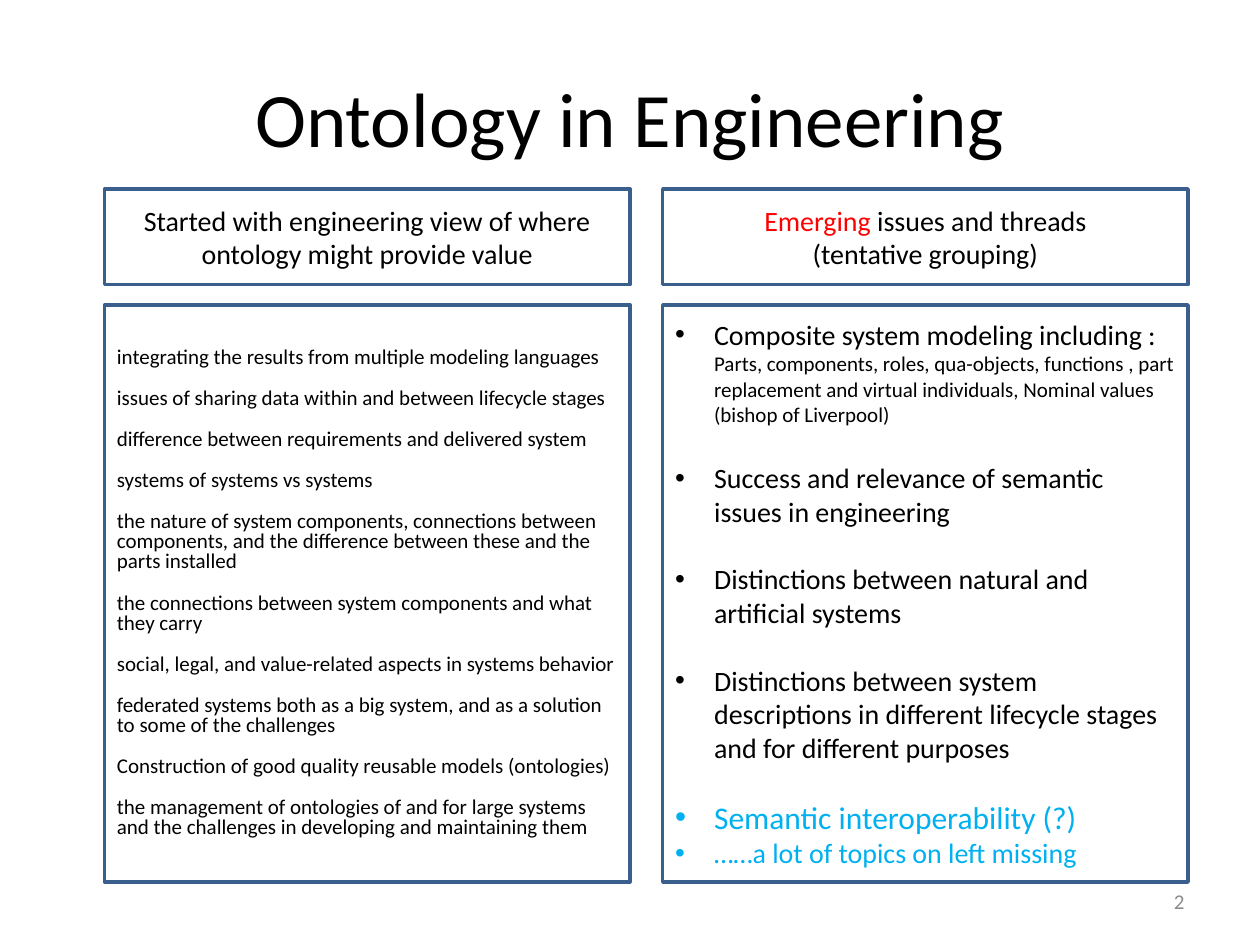
from lxml import etree
from pptx import Presentation
from pptx.dml.color import RGBColor
from pptx.enum.shapes import MSO_SHAPE
from pptx.enum.text import MSO_ANCHOR, PP_ALIGN
from pptx.oxml.ns import qn
from pptx.util import Inches, Pt

RECTANGLE = MSO_SHAPE.RECTANGLE
MIDDLE = MSO_ANCHOR.MIDDLE
LEFT, CENTER, RIGHT = PP_ALIGN.LEFT, PP_ALIGN.CENTER, PP_ALIGN.RIGHT

FONT = "Calibri"
COLORS = {"text": "000000", "paper": "FFFFFF", "border": "3A5F8C",
          "alert": "FF0000", "open": "00B0F0", "number": "8C8C8C"}

# Two equal columns, each a heading above a body
COLUMN_LEFT = (0.83, 5.26)
COLUMN_WIDTH = 4.17
HEADING_TOP, HEADING_HEIGHT = 1.5, 0.76
BODY_TOP, BODY_HEIGHT = 2.42, 4.58
BULLET_INDENT = 0.31
TOPIC_GAP = 19.5

VIEW_HEADING = [[("Started with engineering view of where ontology might provide value", "text")]]
ISSUES_HEADING = [[("Emerging", "alert"), (" issues and threads", "text")],
                  [("(tentative grouping)", "text")]]
VIEW_TOPICS = [
    "integrating the results from multiple modeling languages",
    "issues of sharing data within and between lifecycle stages",
    "difference between requirements and delivered system",
    "systems of systems vs systems",
    "the nature of system components, connections between components, "
    "and the difference between these and the parts installed",
    "the connections between system components and what they carry",
    "social, legal, and value-related aspects in systems behavior",
    "federated systems both as a big system, and as a solution to some of the challenges",
    "Construction of good quality reusable models (ontologies)",
    "the management of ontologies of and for large systems "
    "and the challenges in developing and maintaining them",
]
# Each issue: text, detail, size, colour, space before
ISSUES = [
    ("Composite system modeling including : ",
     "Parts, components, roles, qua-objects, functions , part replacement "
     "and virtual individuals, Nominal values (bishop of Liverpool)", 16, "text", 0),
    ("Success and relevance of semantic issues in engineering", "", 16, "text", TOPIC_GAP),
    ("Distinctions between natural and artificial systems", "", 16, "text", TOPIC_GAP),
    ("Distinctions between system descriptions in different lifecycle stages "
     "and for different purposes", "", 16, "text", TOPIC_GAP),
    ("Semantic interoperability (?)", "", 18, "open", TOPIC_GAP),
    ("……a lot of topics on left missing", "", 16, "open", 0),
]


def rgb(name):
    return RGBColor.from_string(COLORS[name])


def style_font(font, size, color="text"):
    font.name, font.size = FONT, Pt(size)
    font.color.rgb = rgb(color)


def paragraphs(frame, count):
    """Return the frame's first paragraph followed by new ones."""
    return [frame.paragraphs[0]] + [frame.add_paragraph() for _ in range(count - 1)]


def add_bullet(para, indent):
    properties = para._p.get_or_add_pPr()
    properties.set("marL", str(Inches(indent)))
    properties.set("indent", str(-Inches(indent)))
    etree.SubElement(properties, qn("a:buFont"), typeface="Arial")
    etree.SubElement(properties, qn("a:buChar"), char="•")


def add_panel(page, left, top, width, height):
    """Draw a bordered box and return its text frame."""
    panel = page.shapes.add_shape(RECTANGLE, Inches(left), Inches(top),
                                  Inches(width), Inches(height))
    panel.shadow.inherit = False
    panel.fill.solid()
    panel.fill.fore_color.rgb = rgb("paper")
    panel.line.color.rgb = rgb("border")
    panel.line.width = Pt(2)
    frame = panel.text_frame
    frame.word_wrap = True
    frame.vertical_anchor = MIDDLE
    return frame


def add_title(page, text):
    title = page.shapes.title
    title.left, title.top = Inches(0.5), Inches(0.3)
    title.width, title.height = Inches(9), Inches(1.25)
    title.text_frame.vertical_anchor = MIDDLE
    title.text_frame.text = text
    para = title.text_frame.paragraphs[0]
    para.alignment = CENTER
    style_font(para.font, 44)


def add_heading(page, left, lines):
    frame = add_panel(page, left, HEADING_TOP, COLUMN_WIDTH, HEADING_HEIGHT)
    for para, spans in zip(paragraphs(frame, len(lines)), lines):
        para.alignment = CENTER
        for text, color in spans:
            span = para.add_run()
            span.text = text
            style_font(span.font, 16, color)


def add_topics(page, left, topics):
    frame = add_panel(page, left, BODY_TOP, COLUMN_WIDTH, BODY_HEIGHT)
    for para, topic in zip(paragraphs(frame, len(topics)), topics):
        para.text = topic
        para.alignment = LEFT
        para.line_spacing = 0.8
        para.space_after = Pt(12)
        style_font(para.font, 12)


def add_issues(page, left, issues):
    frame = add_panel(page, left, BODY_TOP, COLUMN_WIDTH, BODY_HEIGHT)
    for para, (text, detail, size, color, gap) in zip(paragraphs(frame, len(issues)), issues):
        para.alignment = LEFT
        if gap:
            para.space_before = Pt(gap)
        add_bullet(para, BULLET_INDENT)
        style_font(para.font, size, color)
        for words, points in ((text, size), (detail, 12)):
            if words:
                span = para.add_run()
                span.text = words
                style_font(span.font, points, color)


def add_page_number(page, number):
    box = page.shapes.add_textbox(Inches(7.17), Inches(6.95), Inches(2.33), Inches(0.4))
    frame = box.text_frame
    frame.word_wrap = True
    frame.vertical_anchor = MIDDLE
    para = frame.paragraphs[0]
    para.text = number
    para.alignment = RIGHT
    style_font(para.font, 12, "number")


def main():
    deck = Presentation()
    deck.slide_width, deck.slide_height = Inches(10), Inches(7.5)
    page = deck.slides.add_slide(deck.slide_layouts.get_by_name("Title Only"))
    view_left, issues_left = COLUMN_LEFT

    add_title(page, "Ontology in Engineering")
    # Left column: the starting view
    add_heading(page, view_left, VIEW_HEADING)
    add_topics(page, view_left, VIEW_TOPICS)
    # Right column: the emerging issues
    add_heading(page, issues_left, ISSUES_HEADING)
    add_issues(page, issues_left, ISSUES)
    add_page_number(page, "2")
    deck.save("out.pptx")


if __name__ == "__main__":
    main()
